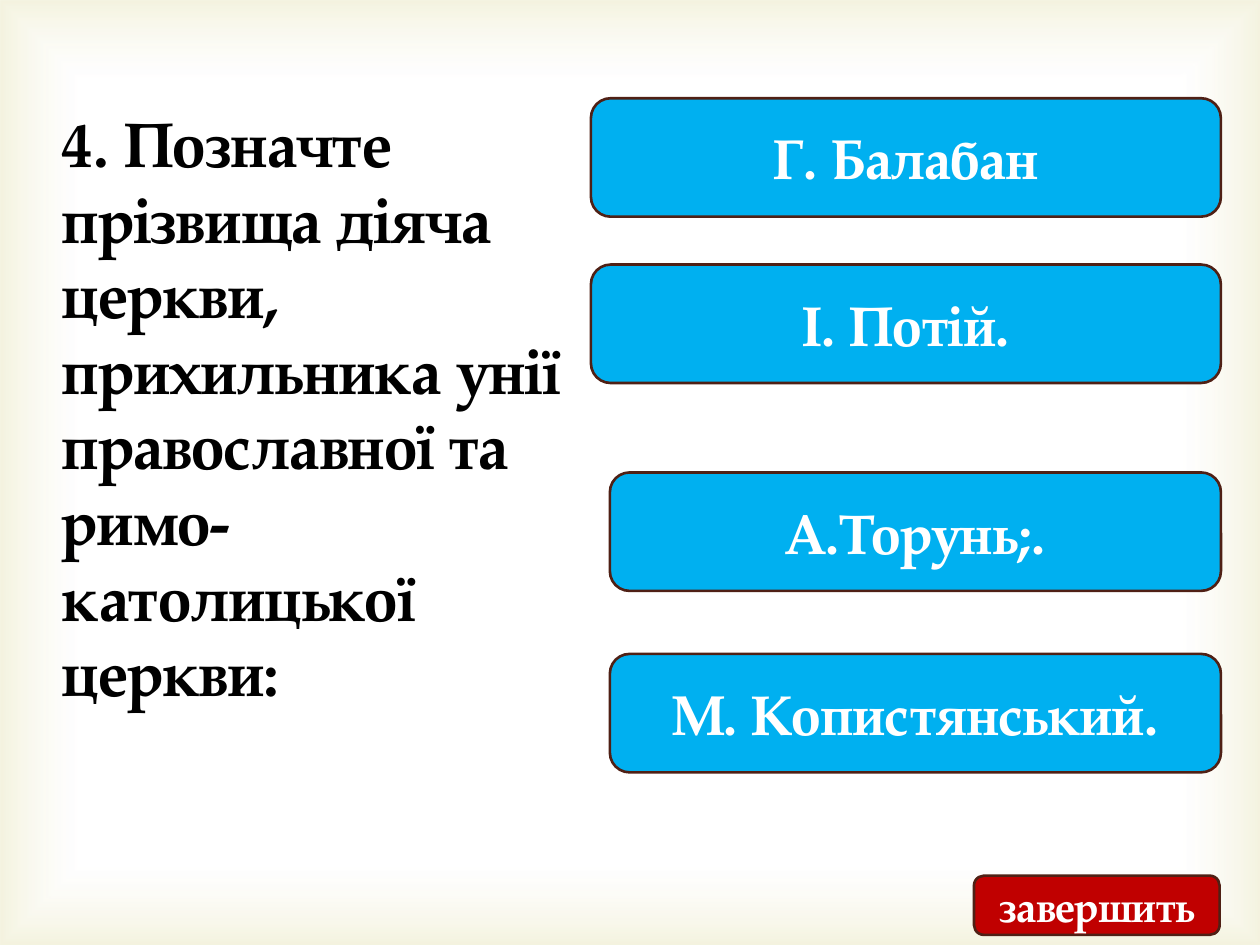
from lxml.etree import SubElement
from pptx import Presentation
from pptx.dml.color import RGBColor
from pptx.enum.shapes import MSO_SHAPE
from pptx.enum.text import MSO_ANCHOR, MSO_AUTO_SIZE, PP_ALIGN
from pptx.oxml.ns import qn
from pptx.util import Inches, Pt

QUESTION = ("4. Позначте прізвища діяча церкви, прихильника унії "
            "православної та римо-католицької церкви:")
# Answer text, left edge, top edge
ANSWERS = [
    ("Г. Балабан", 4.69, 0.78),
    ("І. Потій.", 4.69, 2.1),
    ("А.Торунь;.", 4.84, 3.75),
    ("М. Копистянський.", 4.84, 5.19),
]
ANSWER_RIGHT, ANSWER_HEIGHT = 9.69, 0.94
FINISH = "завершить"

THEME = {
    "font": "TeX Gyre Pagella",
    "text": "000000", "button_text": "FFFFFF",
    "answer": "00B0F0", "finish": "C00000", "outline": "4F2015",
    "question_size": 36, "answer_size": 32, "finish_size": 24,
    # Position, colour and opacity in percent
    "glow": [(83, "FFFFFF", 11), (100, "D1CA75", 23)],
}


def color(name):
    return RGBColor.from_string(THEME[name])


def write(text_frame, text, size, color_name, alignment):
    paragraph = text_frame.paragraphs[0]
    paragraph.alignment = alignment
    run = paragraph.add_run()
    run.text = text
    run.font.name = THEME["font"]
    run.font.size = Pt(THEME[size])
    run.font.bold = True
    run.font.color.rgb = color(color_name)


def add_button(slide, text, box, fill, size):
    shape = slide.shapes.add_shape(MSO_SHAPE.ROUNDED_RECTANGLE, *map(Inches, box))
    shape.shadow.inherit = False
    shape.fill.solid()
    shape.fill.fore_color.rgb = color(fill)
    shape.line.color.rgb = color("outline")
    shape.line.width = Pt(1.5)
    shape.text_frame.word_wrap = True
    shape.text_frame.vertical_anchor = MSO_ANCHOR.MIDDLE
    write(shape.text_frame, text, size, "button_text", PP_ALIGN.CENTER)


def add_glow(slide, width, height):
    shape = slide.shapes.add_shape(MSO_SHAPE.RECTANGLE, 0, 0, width, height)
    shape.shadow.inherit = False
    shape.line.fill.background()
    # Rectangular gradient with translucent stops
    shape.fill.gradient()
    gradient = shape.fill._xPr.find(qn("a:gradFill"))
    for child in list(gradient):
        gradient.remove(child)
    stops = SubElement(gradient, qn("a:gsLst"))
    for position, value, opacity in THEME["glow"]:
        stop = SubElement(stops, qn("a:gs"), pos=str(position * 1000))
        stop_color = SubElement(stop, qn("a:srgbClr"), val=value)
        SubElement(stop_color, qn("a:alpha"), val=str(opacity * 1000))
    outline = SubElement(gradient, qn("a:path"), path="rect")
    SubElement(outline, qn("a:fillToRect"), {side: "50000" for side in "ltrb"})
    # Send behind the title
    slide.shapes._spTree.insert(2, shape._element)


def main():
    presentation = Presentation()
    presentation.slide_width, presentation.slide_height = Inches(10), Inches(7.5)
    slide = presentation.slides.add_slide(presentation.slide_layouts[5])

    # Background glow
    add_glow(slide, presentation.slide_width, presentation.slide_height)

    # Question
    title = slide.shapes.title
    title.left, title.top, title.width, title.height = map(
        Inches, (0.39, 0.78, 4.29, 4.95))
    title.text_frame.word_wrap = True
    title.text_frame.auto_size = MSO_AUTO_SIZE.SHAPE_TO_FIT_TEXT
    title.text_frame.vertical_anchor = MSO_ANCHOR.TOP
    write(title.text_frame, QUESTION, "question_size", "text", PP_ALIGN.LEFT)

    # Answer buttons share a right edge
    for text, left, top in ANSWERS:
        box = (left, top, ANSWER_RIGHT - left, ANSWER_HEIGHT)
        add_button(slide, text, box, "answer", "answer_size")

    # Finish button
    add_button(slide, FINISH, (7.73, 6.95, 1.95, 0.47), "finish", "finish_size")

    presentation.save("out.pptx")


if __name__ == "__main__":
    main()
